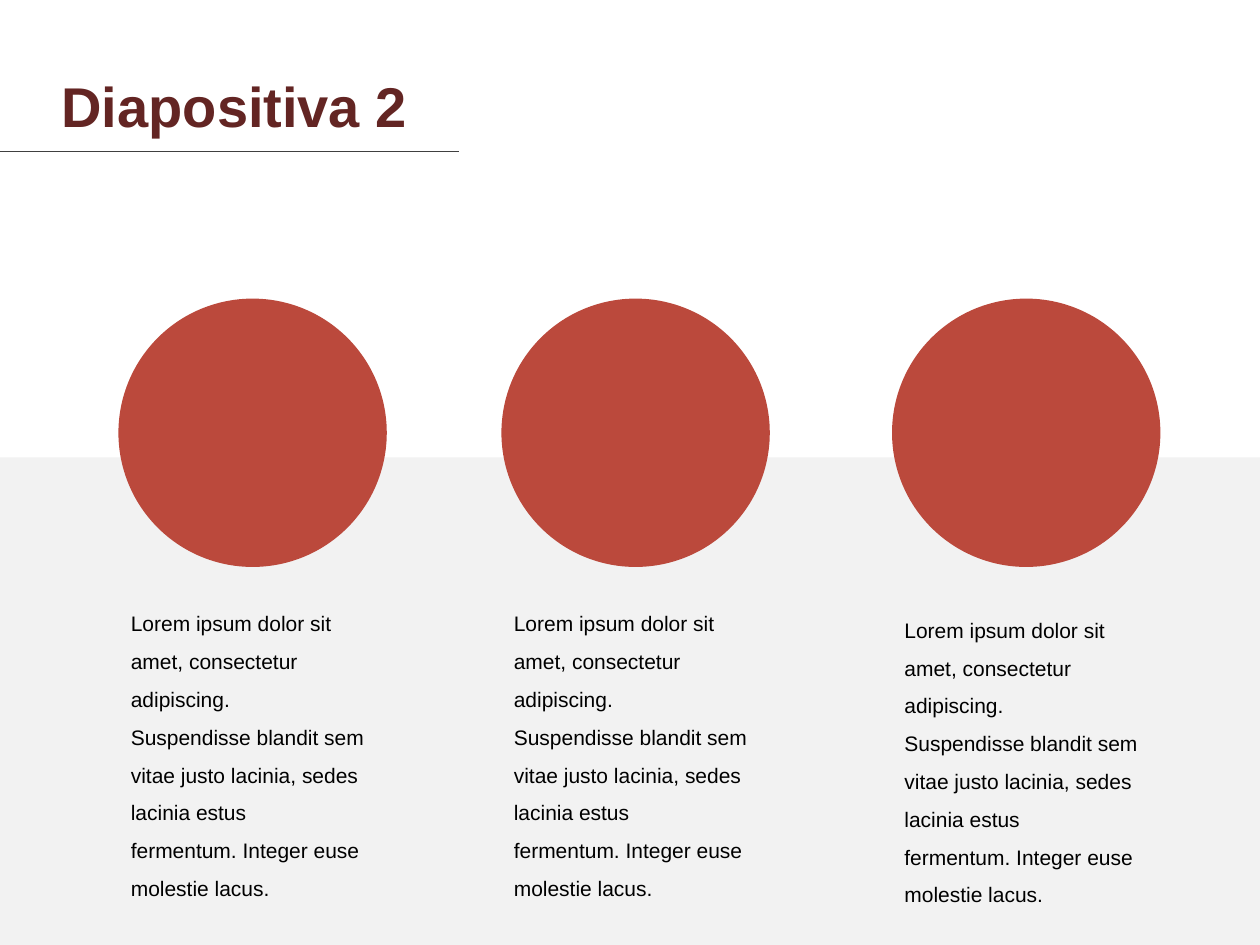
from pptx import Presentation
from pptx.dml.color import RGBColor
from pptx.enum.shapes import MSO_CONNECTOR, MSO_SHAPE
from pptx.enum.text import MSO_AUTO_SIZE
from pptx.oxml.ns import qn
from pptx.util import Inches, Pt
from lxml.etree import SubElement

WHITE = RGBColor(0xFF, 0xFF, 0xFF)
GREY = RGBColor(0xF2, 0xF2, 0xF2)
BRICK = RGBColor(0xBB, 0x49, 0x3C)
MAROON = RGBColor(0x63, 0x25, 0x23)
CHARCOAL = RGBColor(0x40, 0x40, 0x40)
BLACK = RGBColor(0, 0, 0)
FONT = "Arial"

PAGE_WIDTH, PAGE_HEIGHT = 10, 7.5
BAND_TOP = 3.63
CIRCLE_TOP, CIRCLE_SIZE = 2.37, 2.13
TEXT_HEIGHT = 2.51
COLUMNS = [(0.94, 4.7), (3.98, 4.7), (7.08, 4.75)]  # left, top of text
BODY = [
    "Lorem ipsum dolor sit amet, consectetur adipiscing.",
    "Suspendisse blandit sem vitae justo lacinia, sedes lacinia estus",
    "fermentum. Integer euse molestie lacus.",
]


def add_filled(page, kind, box, color):
    shape = page.shapes.add_shape(kind, *map(Inches, box))
    shape.shadow.inherit = False
    shape.fill.solid()
    shape.fill.fore_color.rgb = color
    shape.line.fill.background()


def add_text(page, box, lines, size, color, spacing, bold=False):
    frame = page.shapes.add_textbox(*map(Inches, box)).text_frame
    frame.word_wrap = True
    frame.auto_size = MSO_AUTO_SIZE.SHAPE_TO_FIT_TEXT
    frame.text = "\n".join(lines)
    for para in frame.paragraphs:
        para.line_spacing = spacing
        for span in para.runs:
            span.font.name = FONT
            span.font.size = Pt(size)
            span.font.bold = bold
            span.font.color.rgb = color


def add_heading(page, box):
    """Title with a rule below it that runs in from beyond the left edge."""
    left, top, width, height = box
    add_text(page, box, ["Diapositiva 2"], 32, MAROON, 0.8, bold=True)
    rule_y = Inches(top + height + 0.03)
    rule = page.shapes.add_connector(
        MSO_CONNECTOR.STRAIGHT, Inches(-3.94), rule_y, Inches(left + 3.25), rule_y)
    rule.line.color.rgb = CHARCOAL
    rule.line.width = Pt(0.75)
    SubElement(rule._element.spPr, qn("a:effectLst"))


def add_column(page, left, text_top):
    """Circle with its text below."""
    add_filled(page, MSO_SHAPE.OVAL,
               (left, CIRCLE_TOP, CIRCLE_SIZE, CIRCLE_SIZE), BRICK)
    add_text(page, (left, text_top, CIRCLE_SIZE, TEXT_HEIGHT),
             BODY, 12, BLACK, 1.5)


def main():
    deck = Presentation()
    deck.slide_width = Inches(PAGE_WIDTH)
    deck.slide_height = Inches(PAGE_HEIGHT)
    page = deck.slides.add_slide(deck.slide_layouts[6])
    page.background.fill.solid()
    page.background.fill.fore_color.rgb = WHITE
    add_filled(page, MSO_SHAPE.RECTANGLE,
               (0, BAND_TOP, PAGE_WIDTH, PAGE_HEIGHT - BAND_TOP), GREY)
    for left, text_top in COLUMNS:
        add_column(page, left, text_top)
    add_heading(page, (0.39, 0.62, 10.42, 0.55))
    deck.save("out.pptx")


if __name__ == "__main__":
    main()
